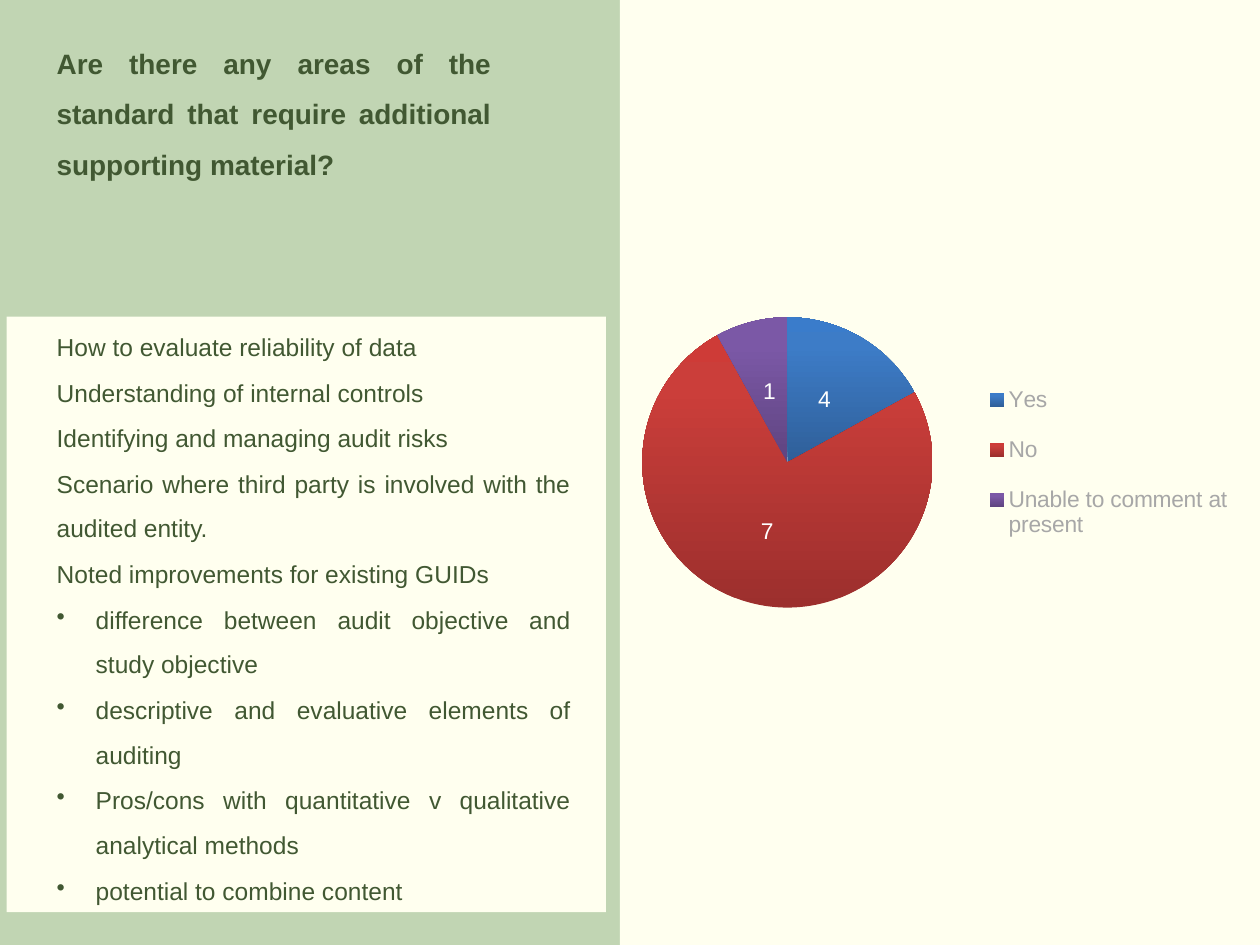
import pptx
import pptx.chart.data
import pptx.dml.color
import pptx.enum.chart
import pptx.enum.shapes
import pptx.enum.text
import pptx.oxml
import pptx.oxml.ns
import pptx.util
from lxml import etree

Pt = pptx.util.Pt
CREAM, SAGE, FOREST, GREY, WHITE = "FFFFEF", "C1D5B3", "415832", "A7A7A7", "FFFFFF"
QUESTION = "Are there any areas of the standard that require additional supporting material?"
TOPICS = [
    "How to evaluate reliability of data",
    "Understanding of internal controls",
    "Identifying and managing audit risks",
    "Scenario where third party is involved with the audited entity.",
    "Noted improvements for existing GUIDs",
]
IMPROVEMENTS = [
    "difference between audit objective and study objective",
    "descriptive and evaluative elements of auditing",
    "Pros/cons with quantitative v qualitative analytical methods",
    "potential to combine content",
]
ANSWERS = [
    ("Yes", 17, "4", ("2F5F99", "3D7CC7", "3A7CCB")),
    ("No", 75, "7", ("9C2F2D", "CB3E3A", "CE3B37")),
    ("Unable to comment at present", 8, "1", ("5F4480", "7B58A6", "7C57A8")),
]


def colour(value):
    """Turn a hex string into a colour."""
    return pptx.dml.color.RGBColor.from_string(value)


def style_font(font, size, value, bold=False):
    """Set face, size, colour and weight of a font."""
    font.name, font.size, font.bold = "Arial", Pt(size), bold
    font.color.rgb = colour(value)


def add_panel(page, left, top, width, height):
    """Place a plain cream rectangle."""
    panel = page.shapes.add_shape(
        pptx.enum.shapes.MSO_SHAPE.RECTANGLE, Pt(left), Pt(top), Pt(width), Pt(height))
    panel.shadow.inherit = False
    panel.fill.solid()
    panel.fill.fore_color.rgb = colour(CREAM)
    panel.line.fill.background()


def add_text(page, left, top, width, height, size, plain, bulleted=(), bold=False):
    """Place justified paragraphs, the plain ones first and the bulleted ones after."""
    box = page.shapes.add_textbox(Pt(left), Pt(top), Pt(width), Pt(height))
    frame = box.text_frame
    frame.word_wrap = True
    frame.auto_size = pptx.enum.text.MSO_AUTO_SIZE.SHAPE_TO_FIT_TEXT
    frame.margin_left = frame.margin_top = frame.margin_right = frame.margin_bottom = 0
    frame.text = "\n".join([*plain, *bulleted])
    for index, para in enumerate(frame.paragraphs):
        para.alignment = pptx.enum.text.PP_ALIGN.JUSTIFY
        para.line_spacing = 1.51
        para.space_before = Pt(0.8)
        style_font(para.runs[0].font, size, FOREST, bold)
        properties = para._p.get_or_add_pPr()
        has_bullet = index >= len(plain)
        properties.set("marL", str(Pt(23 if has_bullet else 0.7)))
        properties.set("indent", str(Pt(-22.3 if has_bullet else 0)))
        if has_bullet:
            bullet = etree.SubElement(properties, pptx.oxml.ns.qn("a:buChar"))
            bullet.set("char", "•")


def set_gradient(fill, shades):
    """Fill with three shades that run from bottom to top."""
    fill.gradient()
    fill.gradient_angle = 90
    stops = fill._fill._gradFill.find(pptx.oxml.ns.qn("a:gsLst"))
    for stop in list(stops):
        stops.remove(stop)
    for position, shade in zip((0, 80, 100), shades):
        stops.append(pptx.oxml.parse_xml(
            f'<a:gs {pptx.oxml.ns.nsdecls("a")} pos="{position * 1000}">'
            f'<a:srgbClr val="{shade}"/></a:gs>'))


def layout_xml(left, top, width, height, target=""):
    """Build a manual chart layout from fractions of the chart box."""
    sizes = zip("xywh", (left, top, width, height))
    values = "".join(f'<c:{key} val="{value}"/>' for key, value in sizes)
    return pptx.oxml.parse_xml(
        f'<c:layout {pptx.oxml.ns.nsdecls("c")}><c:manualLayout>{target}'
        f'<c:xMode val="edge"/><c:yMode val="edge"/>{values}</c:manualLayout></c:layout>')


def add_answers(page, left, top, width, height):
    """Place the pie of answers with its legend on the right."""
    data = pptx.chart.data.CategoryChartData()
    data.categories = [answer[0] for answer in ANSWERS]
    data.add_series("Series 1", [answer[1] for answer in ANSWERS])
    chart = page.shapes.add_chart(
        pptx.enum.chart.XL_CHART_TYPE.PIE, Pt(left), Pt(top), Pt(width), Pt(height), data).chart
    chart.has_title = False
    style_font(chart.font, 10, "000000")
    chart.has_legend = True
    legend = chart.legend
    legend.position = pptx.enum.chart.XL_LEGEND_POSITION.RIGHT
    legend.include_in_layout = False
    style_font(legend.font, 13, GREY)
    plot = chart.plots[0]
    plot.vary_by_categories = True
    for point_index, (_, _, count, shades) in enumerate(ANSWERS):
        point = plot.series[0].points[point_index]
        set_gradient(point.format.fill, shades)
        point.format.line.fill.background()
        label = point.data_label
        label.text_frame.text = count
        style_font(label.text_frame.paragraphs[0].runs[0].font, 13, WHITE)
        label.position = pptx.enum.chart.XL_LABEL_POSITION.CENTER

    area = chart._chartSpace.chart.plotArea
    for layout in area.findall(pptx.oxml.ns.qn("c:layout")):
        area.remove(layout)
    area.insert(0, layout_xml(0, 0.08, 0.47, 0.8, '<c:layoutTarget val="inner"/>'))
    for layout in legend._element.findall(pptx.oxml.ns.qn("c:layout")):
        legend._element.remove(layout)
    position = legend._element.find(pptx.oxml.ns.qn("c:legendPos"))
    position.addnext(layout_xml(0.54, 0.29, 0.43, 0.38))


def main():
    """Build the slide and save it."""
    deck = pptx.Presentation()
    deck.slide_width, deck.slide_height = Pt(720), Pt(540)
    page = deck.slides.add_slide(deck.slide_layouts[6])
    page.background.fill.solid()
    page.background.fill.fore_color.rgb = colour(SAGE)
    add_panel(page, 3.8, 181, 342.5, 340.3)
    add_panel(page, 354.2, 0, 369.4, 540)
    add_text(page, 31.7, 181, 294.5, 364, 14, TOPICS, IMPROVEMENTS)
    add_text(page, 31.7, 16.6, 249, 114, 16, [QUESTION], bold=True)
    add_answers(page, 367, 119.5, 353, 301.7)
    deck.save("out.pptx")


if __name__ == "__main__":
    main()
